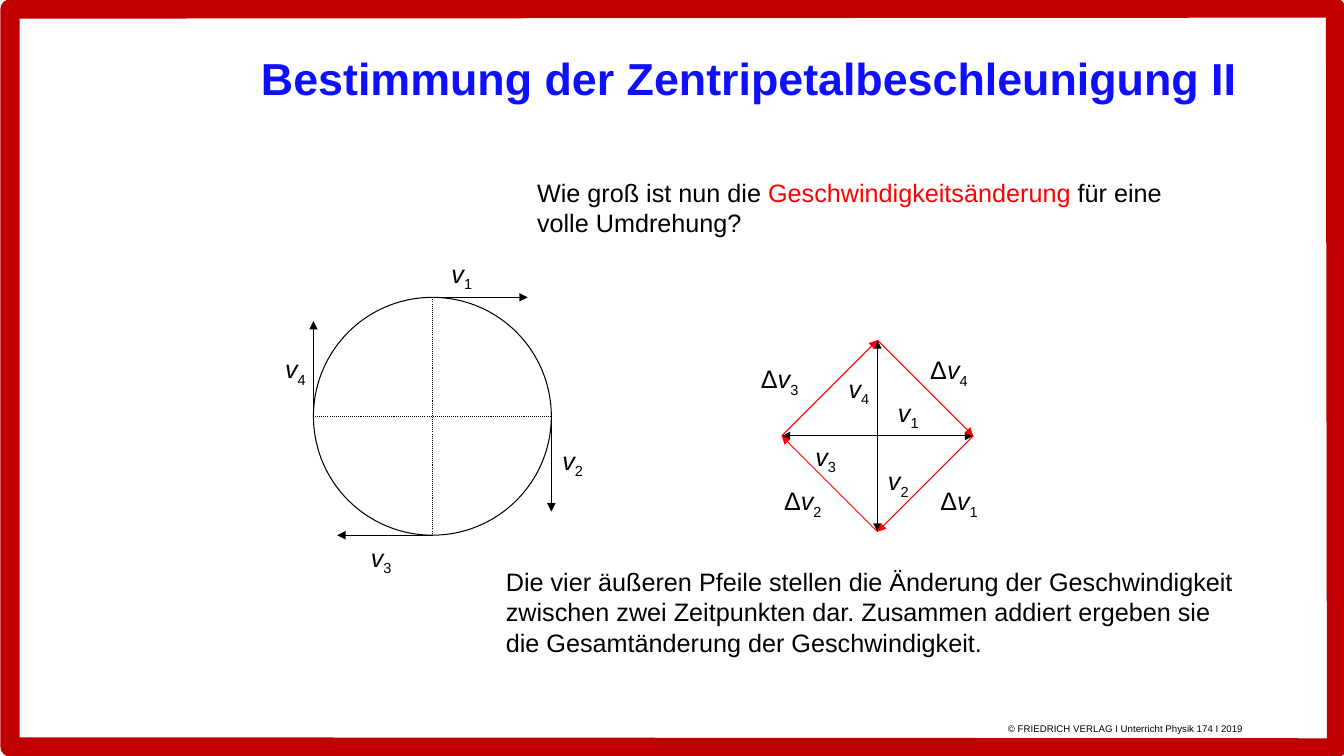
from lxml.etree import SubElement
from pptx import Presentation
from pptx.dml.color import RGBColor
from pptx.enum.dml import MSO_LINE
from pptx.enum.shapes import MSO_CONNECTOR, MSO_SHAPE
from pptx.enum.text import MSO_ANCHOR
from pptx.oxml.ns import qn
from pptx.util import Inches, Pt

# Grid of square cells, ten to the inch
COLUMNS, ROWS = 133.33, 75
BLACK, RED, BLUE, FRAME_RED = "000000", "FF0000", "0F0FFF", "C00000"
# Outward directions of the four stations: top, right, bottom, left
STATIONS = [(0, -1), (1, 0), (0, 1), (-1, 0)]


def cells(count):
    return Inches(count / 10)


def color(value):
    return RGBColor.from_string(value)


def offset(start, direction, length):
    return tuple(s + d * length for s, d in zip(start, direction))


def set_line(line, value, width=0.75):
    line.color.rgb = color(value)
    line.width = Pt(width)


def add_frame(page):
    corners = [(1, 0.9), (132.5, 0.8), (132.6, 74.2), (1, 74.1)]
    points = [(cells(x), cells(y)) for x, y in corners]
    builder = page.shapes.build_freeform(*points[0])
    builder.add_line_segments(points[1:], close=True)
    frame = builder.convert_to_shape()
    frame.shadow.inherit = False
    frame.fill.background()
    set_line(frame.line, FRAME_RED, 13.75)


def add_circle(page, center, radius):
    left, top = (cells(c - radius) for c in center)
    circle = page.shapes.add_shape(
        MSO_SHAPE.OVAL, left, top, cells(2 * radius), cells(2 * radius))
    circle.shadow.inherit = False
    circle.fill.background()
    set_line(circle.line, BLACK)


def add_line(page, start, end, value=BLACK, arrow=True):
    ends = [cells(c) for c in (*start, *end)]
    link = page.shapes.add_connector(MSO_CONNECTOR.STRAIGHT, *ends)
    set_line(link.line, value)
    if arrow:
        SubElement(link.line._get_or_add_ln(), qn("a:tailEnd"), type="triangle")
    else:
        link.line.dash_style = MSO_LINE.ROUND_DOT
    SubElement(link._element.spPr, qn("a:effectLst"))


def add_text(page, place, spans, size=18, value=BLACK, bold=False, wrap=True):
    """Each span is a text with a dict of color, italic and baseline."""
    box = page.shapes.add_textbox(*[cells(c) for c in place])
    box.text_frame.word_wrap = wrap
    para = box.text_frame.paragraphs[0]
    para.font.name = "Arial"
    para.font.size = Pt(size)
    para.font.bold = bold
    for text, style in spans:
        for number, piece in enumerate(text.split("\n")):
            if number:
                para.add_line_break()
            span = para.add_run()
            span.text = piece
            span.font.color.rgb = color(style.get("color", value))
            if style.get("italic"):
                span.font.italic = True
            if "baseline" in style:
                span.font._element.set("baseline", str(style["baseline"] * 1000))
    return box


def add_label(page, corner, number, change=False):
    spans = [("v", {"italic": True}), (str(number), {"baseline": -25})]
    if change:
        spans.insert(0, ("Δ", {}))
    add_text(page, (*corner, 5.7 if change else 4.2, 4), spans, wrap=False)


def add_orbit(page, center=(42.9, 41.3), radius=11.8, speed=9.45):
    add_circle(page, center, radius)
    rim = [offset(center, station, radius) for station in STATIONS]
    for start, end in zip(rim[:2], rim[2:]):
        add_line(page, start, end, arrow=False)
    # The velocity at a station points to the next station's side
    for start, heading in zip(rim, STATIONS[1:] + STATIONS[:1]):
        add_line(page, start, offset(start, heading, speed))
    corners = [(43.8, 25.1), (54.8, 43.7), (35.8, 53.3), (27.3, 34.6)]
    for number, corner in enumerate(corners, 1):
        add_label(page, corner, number)


def add_velocity_diagram(page, hub=(87.05, 43.25), speed=9.5):
    tips = [offset(hub, heading, speed) for heading in STATIONS[1:] + STATIONS[:1]]
    for tip in tips:
        add_line(page, hub, tip)
    for start, end in zip(tips, tips[1:] + tips[:1]):
        add_line(page, start, end, RED)
    inner = [(88.1, 38.9), (87.1, 45.7), (79.9, 43.3), (83.2, 36.5)]
    outer = [(92.3, 47.7), (76.8, 47.7), (74.5, 35.6), (91.3, 34.7)]
    for number, (corner, change_corner) in enumerate(zip(inner, outer), 1):
        add_label(page, corner, number)
        add_label(page, change_corner, number, change=True)


def main():
    deck = Presentation()
    deck.slide_width, deck.slide_height = cells(COLUMNS), cells(ROWS)
    page = deck.slides.add_slide(deck.slide_layouts[6])

    # Frame and copyright line
    add_frame(page)
    add_text(page, (99, 71, 33, 2.8),
             [("© FRIEDRICH VERLAG I Unterricht Physik 174 I 2019", {"baseline": 30})],
             size=12)

    # Title and question
    title = add_text(page, (24.9, 1.1, 99.8, 13.1),
                     [("Bestimmung der Zentripetalbeschleunigung II", {})],
                     size=32, value=BLUE, bold=True)
    title.text_frame.vertical_anchor = MSO_ANCHOR.MIDDLE
    add_text(page, (52.3, 17.1, 64, 7),
             [("Wie groß ist nun die ", {}),
              ("Geschwindigkeitsänderung", {"color": RED}),
              (" für eine\nvolle Umdrehung?", {})], wrap=False)

    # Diagrams and explanation
    add_orbit(page)
    add_velocity_diagram(page)
    add_text(page, (49.2, 55.7, 75.5, 10.1),
             [("Die vier äußeren Pfeile stellen die Änderung der Geschwindigkeit "
               "zwischen zwei Zeitpunkten dar. Zusammen addiert ergeben sie "
               "die Gesamtänderung der Geschwindigkeit.", {})])

    deck.save("out.pptx")


if __name__ == "__main__":
    main()
